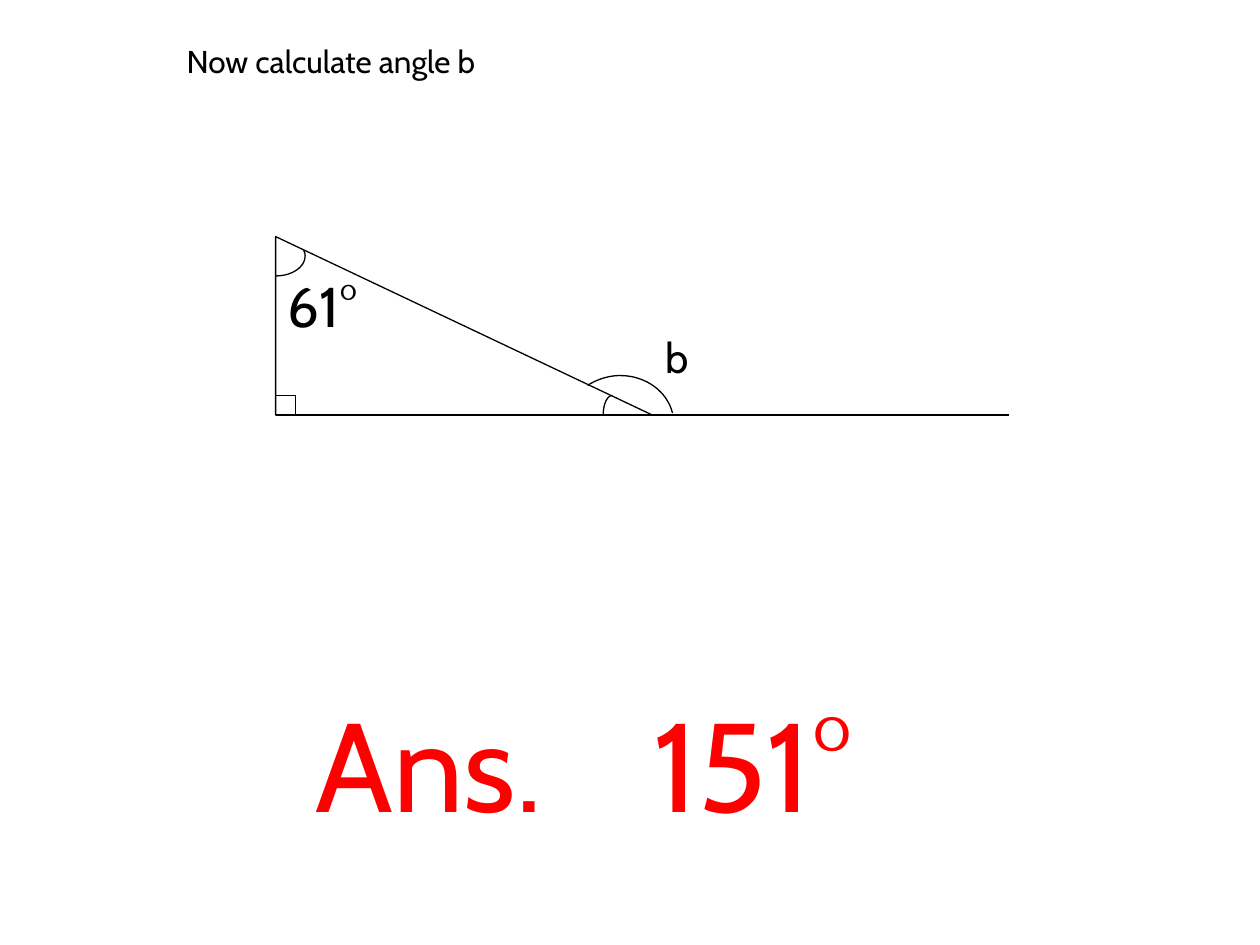
from dataclasses import dataclass

from lxml import etree
from pptx import Presentation
from pptx.dml.color import RGBColor
from pptx.enum.shapes import MSO_CONNECTOR, MSO_SHAPE
from pptx.enum.text import MSO_ANCHOR, MSO_AUTO_SIZE, PP_ALIGN
from pptx.oxml.ns import qn
from pptx.util import Pt

STRAIGHT = MSO_CONNECTOR.STRAIGHT
RIGHT_TRIANGLE = MSO_SHAPE.RIGHT_TRIANGLE
TOP = MSO_ANCHOR.TOP
NO_AUTOFIT = MSO_AUTO_SIZE.NONE
LEFT = PP_ALIGN.LEFT
TITLE_ONLY = 5
CURVE_STEPS = 16
UNITS_PER_POINT = 100


@dataclass(frozen=True)
class Theme:
    font: str = "Cabin"
    ink: RGBColor = RGBColor(0, 0, 0)
    accent: RGBColor = RGBColor(255, 0, 0)
    title_size: float = 18
    label_size: float = 24
    angle_size: float = 32
    answer_size: float = 72
    line_width: float = 0.75


def curve_points(start, first, second, end):
    points = []
    for step in range(CURVE_STEPS + 1):
        t = step / CURVE_STEPS
        weights = ((1 - t) ** 3, 3 * t * (1 - t) ** 2, 3 * t * t * (1 - t), t ** 3)
        corners = (start, first, second, end)
        points.append(tuple(
            sum(weight * corner[axis] for weight, corner in zip(weights, corners))
            for axis in (0, 1)
        ))
    return points


class SlideBuilder:
    def __init__(self, slide, theme):
        self.slide = slide
        self.theme = theme
        self.diagram = slide.shapes.add_group_shape().shapes

    def fill_text(self, box, text, size, color):
        frame = box.text_frame
        frame.word_wrap = True
        frame.auto_size = NO_AUTOFIT
        frame.vertical_anchor = TOP
        para = frame.paragraphs[0]
        para.alignment = LEFT
        span = para.add_run()
        span.text = text
        span.font.name = self.theme.font
        span.font.size = Pt(size)
        span.font.color.rgb = color
        return para

    def title(self, text, left, top, width, height):
        box = self.slide.shapes.title
        box.left, box.top, box.width, box.height = map(Pt, (left, top, width, height))
        self.fill_text(box, text, self.theme.title_size, self.theme.ink)

    def label(self, text, left, top, width, height, size):
        box = self.diagram.add_textbox(*map(Pt, (left, top, width, height)))
        self.fill_text(box, text, size, self.theme.ink)

    def answer(self, text, left, top, width, height, inset, tab):
        box = self.slide.shapes.add_textbox(*map(Pt, (left, top, width, height)))
        para = self.fill_text(box, text, self.theme.answer_size, self.theme.accent)
        box.text_frame.margin_left = Pt(inset)
        properties = para._p.get_or_add_pPr()
        tabs = etree.SubElement(properties, qn("a:tabLst"))
        etree.SubElement(tabs, qn("a:tab"), pos=str(Pt(tab)), algn="l")

    def outline(self, shape):
        shape.shadow.inherit = False
        shape.fill.background()
        shape.line.color.rgb = self.theme.ink
        shape.line.width = Pt(self.theme.line_width)

    def triangle(self, left, top, width, height):
        self.outline(self.diagram.add_shape(
            RIGHT_TRIANGLE, *map(Pt, (left, top, width, height))))

    def line(self, start, end):
        connector = self.diagram.add_connector(STRAIGHT, *map(Pt, start + end))
        connector.line.color.rgb = self.theme.ink
        connector.line.width = Pt(self.theme.line_width)
        etree.SubElement(connector._element.spPr, qn("a:effectLst"))

    def arc(self, *curves):
        points = [
            (x * UNITS_PER_POINT, y * UNITS_PER_POINT)
            for curve in curves for x, y in curve_points(*curve)
        ]
        builder = self.diagram.build_freeform(
            *points[0], scale=Pt(1) / UNITS_PER_POINT)
        builder.add_line_segments(points[1:], close=False)
        self.outline(builder.convert_to_shape())


def main():
    deck = Presentation()
    deck.slide_width, deck.slide_height = Pt(720), Pt(540)
    theme = Theme()
    page = SlideBuilder(deck.slides.add_slide(deck.slide_layouts[TITLE_ONLY]), theme)

    page.title("Now calculate angle b", 99.4, 20.2, 453.6, 55.4)

    left, top, base = 157.5, 135.2, 237.2
    mark = 11.3
    page.triangle(left, top, 215.3, base - top)
    page.line((left, base), (576.7, base))
    corner = (left + mark, base - mark)
    page.line(corner, (left, base - mark))
    page.line(corner, (left + mark, base))

    page.arc(
        ((left, 157.7), (167, 157.7), (174.4, 152.6), (174.4, 146.2)),
        ((174.4, 146.2), (174.4, 145.2), (174.2, 144), (173.5, 143.1)),
    )
    page.arc(((349.9, 226), (347, 226), (344.7, 231), (344.7, base)))
    page.arc(
        ((335.8, 220.2), (341.3, 216.7), (347.8, 214.6), (354.5, 214.6)),
        ((354.5, 214.6), (368.8, 214.6), (381.2, 223.5), (384.3, 236)),
    )
    page.label("61°", left, 151.9, 79.2, 45.4, theme.angle_size)
    page.label("b", 373, 185.8, 51.1, 36, theme.label_size)

    page.answer("Ans.\t151°", 139, 388.8, 391, 93.6, inset=41.5, tab=193)
    deck.save("out.pptx")


if __name__ == "__main__":
    main()
